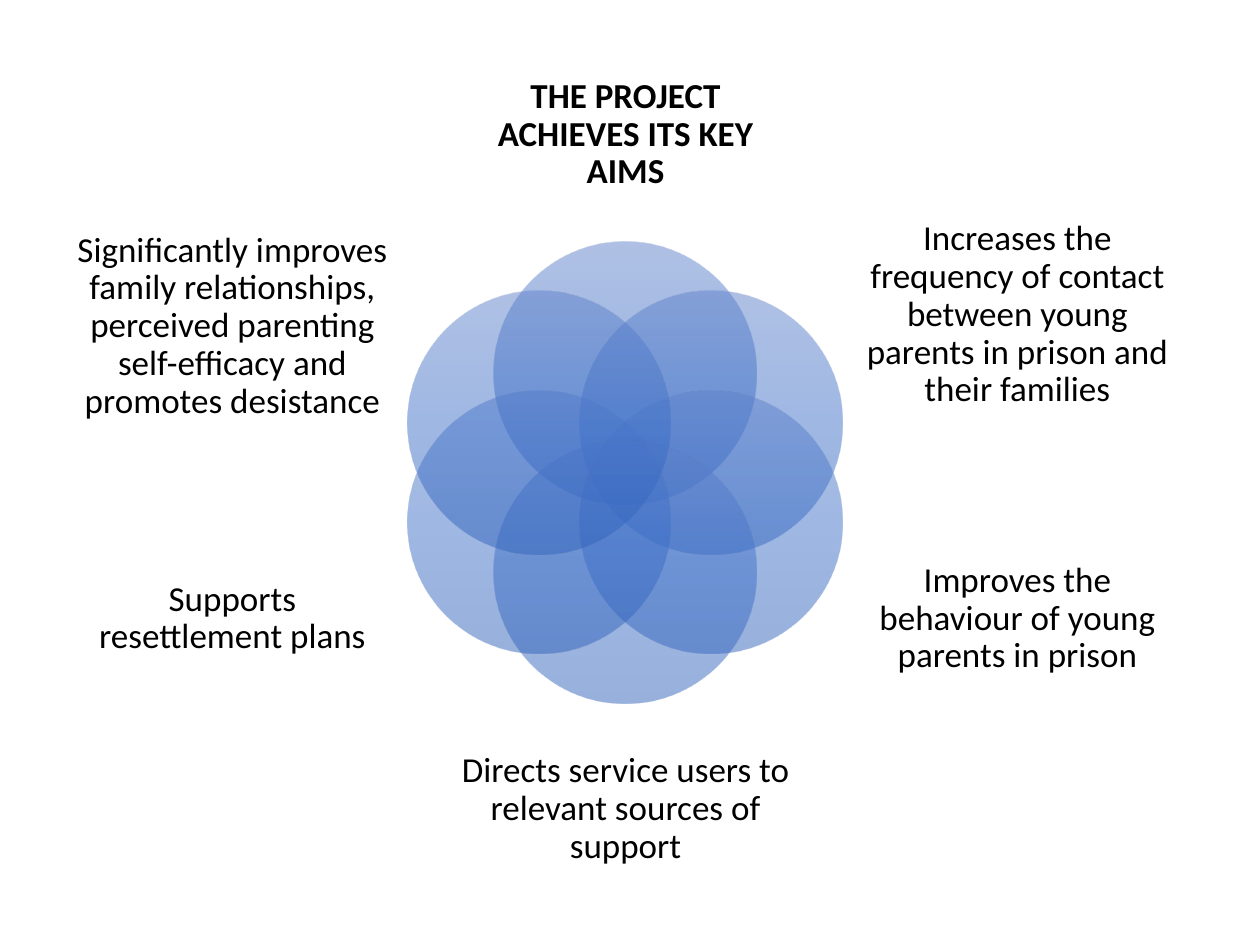
import math
from dataclasses import dataclass

from lxml import etree
from pptx import Presentation
from pptx import util as u
from pptx.dml.color import RGBColor
from pptx.enum import shapes, text
from pptx.oxml.ns import qn

MID_X, MID_Y = 4.96, 3.75
RING = 0.79
SIZE = 2.09
STOPS = ((0, "6183CB"), (50, "3E70CA"), (100, "3062BB"))
ALPHA = 50
SIDE_W = 2.47
LEFT, RIGHT = 0.61, 6.84


@dataclass
class Label:
    words: str
    left: float
    top: float
    width: float
    height: float
    bold: bool = False


# Clockwise from the top, one per circle
LABELS = [
    Label("THE PROJECT ACHIEVES ITS KEY AIMS", 3.66, 0.36, 2.61, 1.42, True),
    Label("Increases the frequency of contact between young parents in prison "
          "and their families", RIGHT, 1.72, SIDE_W, 1.56),
    Label("Improves the behaviour of young parents in prison",
          RIGHT, 4.04, SIDE_W, 1.74),
    Label("Directs service users to relevant sources of support",
          3.66, 5.71, 2.61, 1.42),
    Label("Supports resettlement plans", LEFT, 4.04, SIDE_W, 1.74),
    Label("Significantly improves family relationships, perceived parenting "
          "self-efficacy and promotes desistance", LEFT, 1.72, SIDE_W, 1.74),
]


def color(code: str) -> RGBColor:
    return RGBColor.from_string(code)


def shade(shape) -> None:
    """Fill with the see-through gradient, running from top to bottom."""
    shape.fill.gradient()
    shape.fill.gradient_angle = 270
    stops = shape.element.spPr.find(qn("a:gradFill")).find(qn("a:gsLst"))
    for old in list(stops):
        stops.remove(old)
    for place, code in STOPS:
        stop = etree.SubElement(stops, qn("a:gs"), pos=str(place * 1000))
        tint = etree.SubElement(stop, qn("a:srgbClr"), val=str(color(code)))
        etree.SubElement(tint, qn("a:alpha"), val=str(ALPHA * 1000))


def add_petal(slide, turn: float) -> None:
    """Add a circle on the ring, turned clockwise from the top."""
    left = MID_X + RING * math.sin(turn) - SIZE / 2
    top = MID_Y - RING * math.cos(turn) - SIZE / 2
    petal = slide.shapes.add_shape(
        shapes.MSO_SHAPE.OVAL, u.Inches(left), u.Inches(top),
        u.Inches(SIZE), u.Inches(SIZE))
    petal.shadow.inherit = False
    petal.line.fill.background()
    shade(petal)


def set_label(box, label: Label) -> None:
    box.left, box.top = u.Inches(label.left), u.Inches(label.top)
    box.width, box.height = u.Inches(label.width), u.Inches(label.height)
    frame = box.text_frame
    frame.text = label.words
    frame.word_wrap = True
    frame.auto_size = text.MSO_AUTO_SIZE.NONE
    frame.vertical_anchor = text.MSO_ANCHOR.MIDDLE
    frame.margin_left = frame.margin_right = 0
    frame.margin_top = frame.margin_bottom = 0
    para = frame.paragraphs[0]
    para.alignment = text.PP_ALIGN.CENTER
    para.line_spacing = 0.9
    font = para.runs[0].font
    font.name, font.size, font.bold = "Calibri", u.Pt(20), label.bold
    font.color.rgb = color("000000")


def main() -> None:
    deck = Presentation()
    deck.slide_width, deck.slide_height = u.Inches(10), u.Inches(7.5)
    slide = deck.slides.add_slide(deck.slide_layouts[5])
    for i, label in enumerate(LABELS):
        add_petal(slide, math.tau * i / len(LABELS))
        if i == 0:
            box = slide.shapes.title
        else:
            box = slide.shapes.add_textbox(0, 0, 0, 0)
        set_label(box, label)
    deck.save("out.pptx")


if __name__ == "__main__":
    main()
